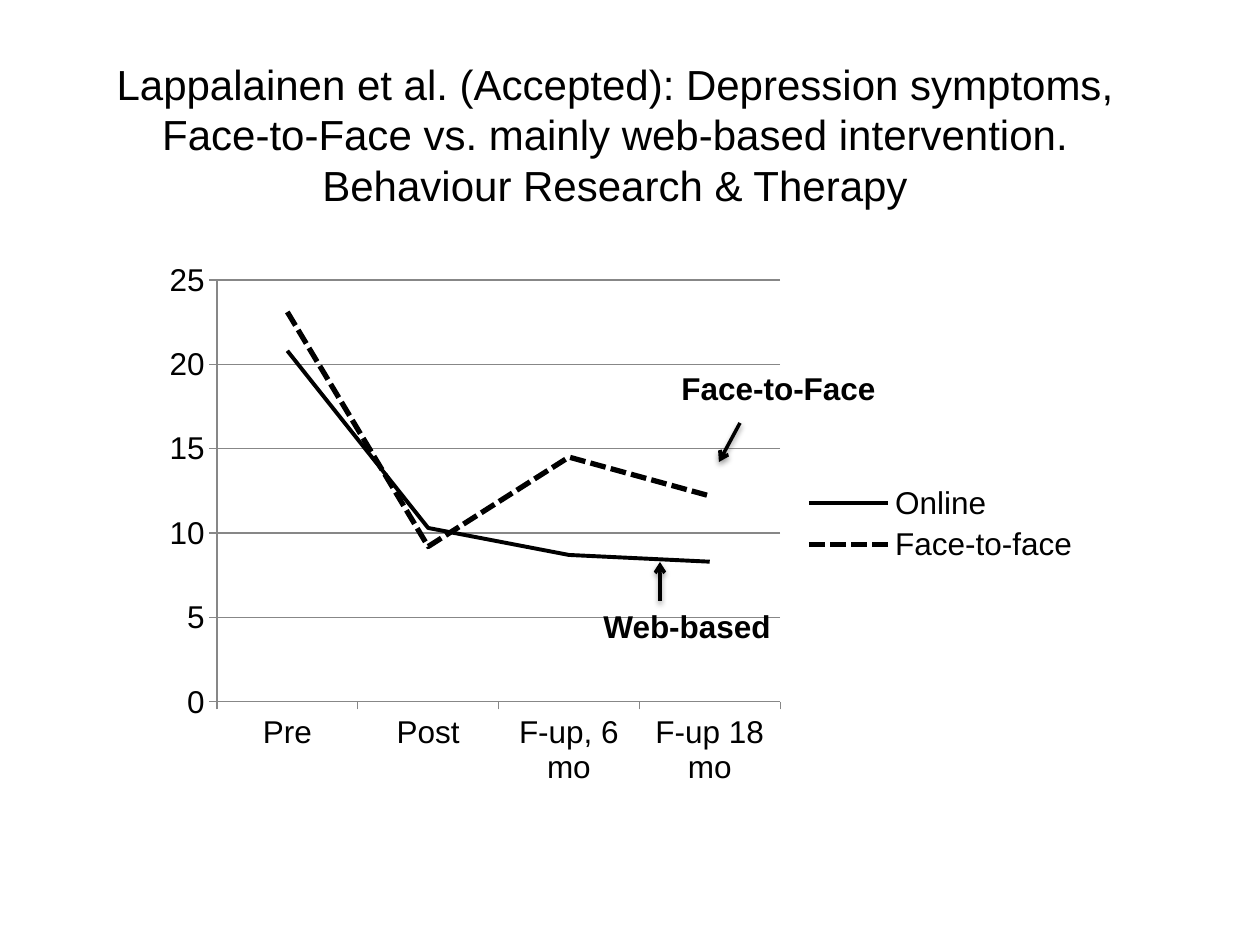
from lxml import etree
from pptx import Presentation
from pptx.chart.data import CategoryChartData
from pptx.dml.color import RGBColor
from pptx.enum.chart import XL_CHART_TYPE, XL_LEGEND_POSITION, XL_TICK_MARK
from pptx.enum.dml import MSO_LINE
from pptx.enum.shapes import MSO_CONNECTOR
from pptx.enum.text import MSO_ANCHOR, PP_ALIGN
from pptx.oxml import parse_xml
from pptx.oxml.ns import nsdecls, qn
from pptx.util import Emu, Pt

LINE_CHART = XL_CHART_TYPE.LINE
LEGEND_RIGHT = XL_LEGEND_POSITION.RIGHT
TICK_OUT = XL_TICK_MARK.OUTSIDE
SOLID, DASHED = MSO_LINE.SOLID, MSO_LINE.SQUARE_DOT
STRAIGHT = MSO_CONNECTOR.STRAIGHT
MIDDLE, CENTER, LEFT = MSO_ANCHOR.MIDDLE, PP_ALIGN.CENTER, PP_ALIGN.LEFT

# Content; all lengths in px
PX = 914400 // 126
FONT = "Arial"
COLORS = {"ink": "000000", "grid": "878787"}
TITLE = ("Lappalainen et al. (Accepted): Depression symptoms, Face-to-Face vs. "
         "mainly web-based intervention. Behaviour Research & Therapy")
TITLE_BOX = (74, 55, 1082, 158)
CHART_BOX = (151, 251, 942, 546)
PLOT_BOX = (217, 280, 563, 422)
CATEGORIES = ["Pre", "Post", "F-up, 6 mo", "F-up 18 mo"]
SERIES = [  # name, values, line width in pt, dash
    ("Online", (20.8, 10.3, 8.7, 8.3), 2.25, SOLID),
    ("Face-to-face", (23.1, 9.2, 14.5, 12.2), 3, DASHED),
]
CALLOUTS = [  # text, text box, arrow start, arrow end
    ("Web-based", (591, 601, 194, 50), (660, 601), (660, 562)),
    ("Face-to-Face", (669, 363, 222, 50), (740, 423), (719, 462)),
]


def px(*lengths):
    return [Emu(length * PX) for length in lengths]


def color(name):
    return RGBColor.from_string(COLORS[name])


def style_font(font, size, bold=False):
    font.name, font.size, font.bold = FONT, Pt(size), bold
    font.color.rgb = color("ink")


def add_text(slide, text, box, size, align=LEFT, bold=False, wrap=False):
    frame = slide.shapes.add_textbox(*px(*box)).text_frame
    frame.text = text
    frame.word_wrap = wrap
    frame.vertical_anchor = MIDDLE
    paragraph = frame.paragraphs[0]
    paragraph.alignment = align
    style_font(paragraph.runs[0].font, size, bold)


def add_arrow(slide, start, end):
    arrow = slide.shapes.add_connector(STRAIGHT, *px(*start, *end))
    arrow.line.color.rgb = color("ink")
    arrow.line.width = Pt(2)
    etree.SubElement(arrow.line._get_or_add_ln(), qn("a:tailEnd"), type="arrow")
    arrow._element.spPr.append(parse_xml(
        f'<a:effectLst {nsdecls("a")}><a:outerShdw blurRad="40000" dist="20000" '
        f'dir="5400000" rotWithShape="0"><a:srgbClr val="{COLORS["ink"]}">'
        '<a:alpha val="38000"/></a:srgbClr></a:outerShdw></a:effectLst>'))


def place_plot(chart):
    """Fix the inner plot area as fractions of the chart frame."""
    left, top, width, height = CHART_BOX
    x, y, w, h = PLOT_BOX
    fractions = {"x": (x - left) / width, "y": (y - top) / height,
                 "w": w / width, "h": h / height}
    sizes = "".join(f'<c:{key} val="{value:.3f}"/>' for key, value in fractions.items())
    plot_area = chart._chartSpace.chart.plotArea
    for old in plot_area.findall(qn("c:layout")):
        plot_area.remove(old)
    plot_area.insert(0, parse_xml(
        f'<c:layout {nsdecls("c")}><c:manualLayout><c:layoutTarget val="inner"/>'
        f'<c:xMode val="edge"/><c:yMode val="edge"/>{sizes}</c:manualLayout></c:layout>'))


def add_symptom_chart(slide):
    data = CategoryChartData()
    data.categories = CATEGORIES
    for name, values, _, _ in SERIES:
        data.add_series(name, values)
    chart = slide.shapes.add_chart(LINE_CHART, *px(*CHART_BOX), data).chart
    style_font(chart.font, 18)
    chart.has_title = False
    chart.has_legend = True
    chart.legend.position = LEGEND_RIGHT
    chart.legend.include_in_layout = False
    chart.plots[0].vary_by_categories = False

    for series, (_, _, width, dash) in zip(chart.plots[0].series, SERIES):
        series.smooth = False
        series.format.line.color.rgb = color("ink")
        series.format.line.width = Pt(width)
        series.format.line.dash_style = dash

    scores = chart.value_axis
    scores.minimum_scale, scores.maximum_scale, scores.major_unit = 0, 25, 5
    scores.has_major_gridlines = True
    for axis in (scores, chart.category_axis):
        axis.major_tick_mark = TICK_OUT
    for part in (scores, chart.category_axis, scores.major_gridlines):
        part.format.line.color.rgb = color("grid")
        part.format.line.width = Pt(0.75)
    place_plot(chart)


def main():
    deck = Presentation()
    deck.slide_width, deck.slide_height = px(1260, 945)
    slide = deck.slides.add_slide(deck.slide_layouts[6])

    # Title and chart
    add_text(slide, TITLE, TITLE_BOX, 24, align=CENTER, wrap=True)
    add_symptom_chart(slide)

    # Labels pointing at the two lines
    for text, box, start, end in CALLOUTS:
        add_text(slide, text, box, 18, bold=True)
        add_arrow(slide, start, end)

    deck.save("out.pptx")


if __name__ == "__main__":
    main()
